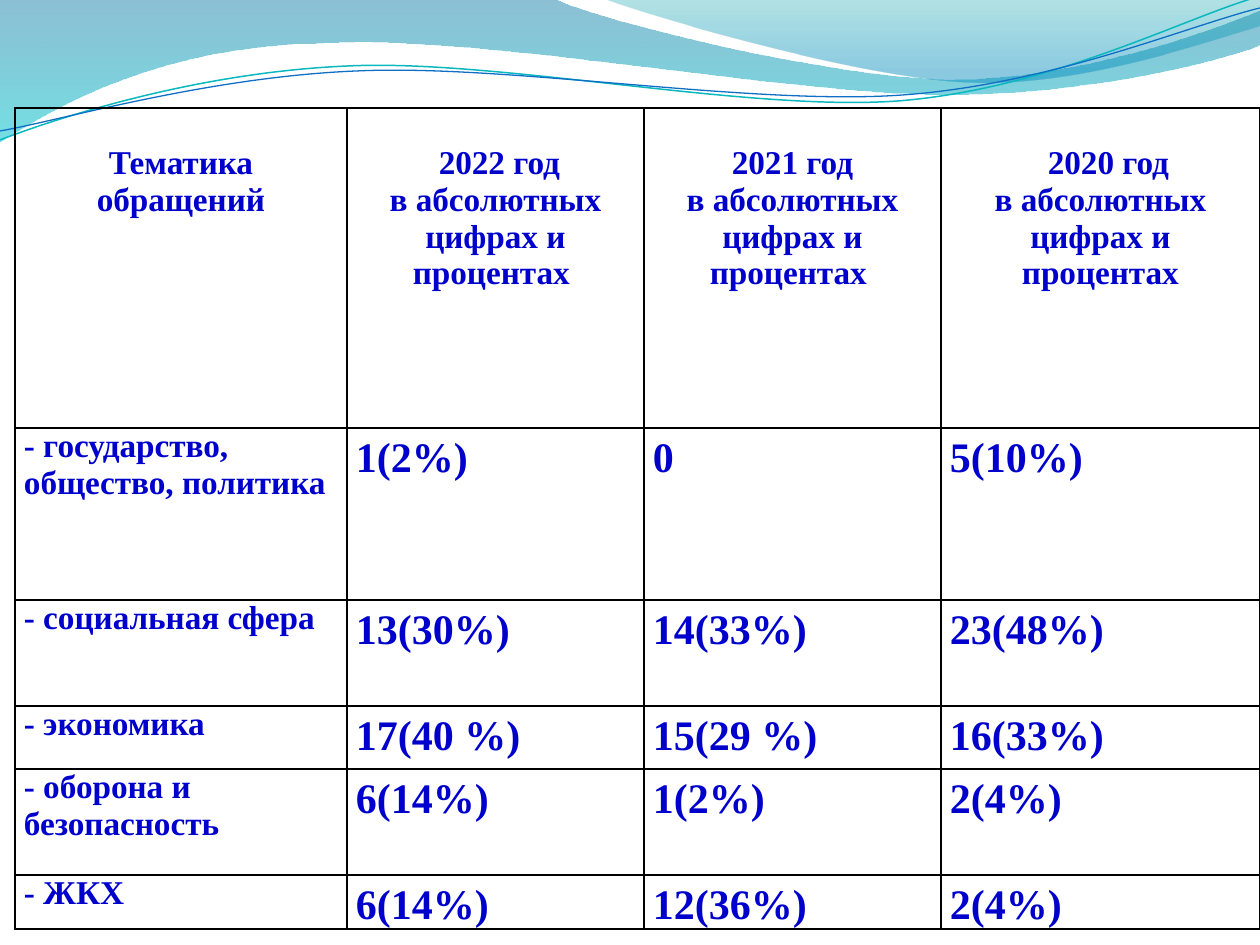
"""Build a slide with a wave banner and a table of appeals by topic and year."""
import math
from dataclasses import dataclass
from itertools import pairwise

from lxml import etree
from pptx import Presentation
from pptx import util as u
from pptx.dml.color import RGBColor
from pptx.enum import text
from pptx.oxml.ns import qn

PX = 914400 / 126
FONT = "Times New Roman"
COLORS = {
    "text": "0000CC", "border": "000000",
    "deep": "0074A1", "aqua": "00C6CF",
    "teal": "00A1A9", "sky": "008BBF",
    "teal_line": "0AB8BF", "blue_line": "0F6FC6",
}


@dataclass(frozen=True)
class Stop:
    position: float
    color: str
    opacity: int


@dataclass(frozen=True)
class Wave:
    box: tuple[int, int, int, int]
    start: tuple[int, int]
    segments: tuple[tuple[int, ...], ...]
    stops: tuple[Stop, ...] = ()
    line: str = ""
    width: float = 0
    rotation: float = 0


@dataclass(frozen=True)
class Header:
    lines: tuple[str, ...]
    indent: int = 0


@dataclass(frozen=True)
class Row:
    height: int
    topic: str
    values: tuple[str, ...]


WAVES = (
    Wave((-1, -1, 1262, 143), (0, 0),
         ((554, -1), (600, 21, 837, 79, 955, 79), (1074, 79, 1207, 33, 1260, 11),
          (1261, 45), (1239, 55, 1096, 96, 940, 94), (784, 94, 481, 35, 324, 43),
          (163, 45, 58, 105, -1, 142), (0, 0)),
         stops=(Stop(0, "deep", 45), Stop(1, "aqua", 55))),
    Wave((604, -1, 656, 88), (604, -1),
         ((641, 14, 859, 78, 969, 82), (1079, 87, 1211, 40, 1260, 26), (1260, 0), (604, -1)),
         stops=(Stop(0, "teal", 30), Stop(0.8, "sky", 45))),
    Wave((-3, 28, 1263, 89), (0, 140),
         ((60, 117, 199, 72, 349, 66), (498, 59, 747, 112, 898, 101),
          (1050, 89, 1182, 19, 1257, -3)), line="teal_line", width=0.85, rotation=357.3),
    Wave((-3, 38, 1264, 73), (0, 131),
         ((59, 121, 207, 77, 357, 71), (508, 64, 752, 106, 903, 95),
          (1053, 84, 1187, 26, 1260, 8)), line="blue_line", width=0.75, rotation=357.3),
)
COLUMN_EDGES = (15, 347, 644, 941, 1260)
TABLE_TOP = 108
HEADER_HEIGHT = 320
HEADER_INSET = 37
UNITS = "в абсолютных цифрах и процентах"
HEADERS = (
    Header(("Тематика обращений",)),
    Header(("2022 год", UNITS + " "), indent=8),
    Header(("2021 год", UNITS + " ")),
    Header(("2020 год", UNITS), indent=16),
)
ROWS = (
    Row(172, "- государство, общество, политика", ("1(2%)", "0", "5(10%)")),
    Row(106, "- социальная сфера", ("13(30%)", "14(33%)", "23(48%)")),
    Row(63, "- экономика", ("17(40 %)", "15(29 %)", "16(33%)")),
    Row(106, "- оборона и безопасность", ("6(14%)", "1(2%)", "2(4%)")),
    Row(54, "- ЖКХ", ("6(14%)", "12(36%)", "2(4%)")),
)


def px(n: float) -> u.Emu:
    """Turn pixels into EMU."""
    return u.Emu(round(n * PX))


def rgb(name: str) -> RGBColor:
    """Look up a named colour."""
    return RGBColor.from_string(COLORS[name])


def to_local(wave: Wave, x: float, y: float) -> tuple[u.Emu, u.Emu]:
    """Turn a slide point into a point of the wave's unrotated box."""
    left, top, width, height = wave.box
    dx, dy = x - left - width / 2, y - top - height / 2
    sin, cos = math.sin(math.radians(-wave.rotation)), math.cos(math.radians(wave.rotation))
    return px(width / 2 + dx * cos - dy * sin), px(height / 2 + dx * sin + dy * cos)


def set_curves(sp, wave: Wave) -> None:
    """Replace the straight outline of a freeform by the lines and curves of a wave."""
    sp.left, sp.top, sp.width, sp.height = map(px, wave.box)
    sp.rotation = wave.rotation
    outline = next(sp._element.iter(qn("a:path")))
    outline.set("w", str(sp.width))
    outline.set("h", str(sp.height))
    for child in list(outline):
        outline.remove(child)
    for i, segment in enumerate((wave.start, *wave.segments)):
        tag = "moveTo" if i == 0 else "lnTo" if len(segment) == 2 else "cubicBezTo"
        step = etree.SubElement(outline, qn(f"a:{tag}"))
        for point in zip(segment[::2], segment[1::2]):
            x, y = to_local(wave, *point)
            etree.SubElement(step, qn("a:pt"), x=str(x), y=str(y))
    if wave.stops:
        etree.SubElement(outline, qn("a:close"))


def draw_wave(s, wave: Wave) -> None:
    """Draw a wave as a gradient area or as an open line."""
    builder = s.shapes.build_freeform(*map(px, wave.start), scale=1.0)
    builder.add_line_segments([tuple(map(px, segment[-2:])) for segment in wave.segments],
                              close=False)
    sp = builder.convert_to_shape()
    set_curves(sp, wave)
    sp.shadow.inherit = False
    if not wave.stops:
        sp.fill.background()
        sp.line.color.rgb = rgb(wave.line)
        sp.line.width = u.Pt(wave.width)
        return
    sp.line.fill.background()
    sp.fill.gradient()
    sp.fill.gradient_angle = 270
    for target, stop in zip(sp.fill.gradient_stops, wave.stops):
        target.position = stop.position
        target.color.rgb = rgb(stop.color)
    for color, stop in zip(sp._element.spPr.iter(qn("a:srgbClr")), wave.stops):
        etree.SubElement(color, qn("a:alpha"), val=str(stop.opacity * 1000))


def set_borders(cell) -> None:
    """Give a cell a thin solid border on all four sides."""
    tc_pr = cell._tc.get_or_add_tcPr()
    for i, side in enumerate(("lnL", "lnR", "lnT", "lnB")):
        ln = etree.Element(qn(f"a:{side}"), w=str(u.Pt(1)))
        fill = etree.SubElement(ln, qn("a:solidFill"))
        etree.SubElement(fill, qn("a:srgbClr"), val=COLORS["border"])
        tc_pr.insert(i, ln)


def write(cell, *lines: str, size: float = 19, align=text.PP_ALIGN.LEFT,
          spacing: float = 1.0, top: int = 0, indent: int = 0) -> None:
    """Write paragraphs into a cell, the first one indented, and format them."""
    cell.fill.background()
    set_borders(cell)
    cell.margin_left = cell.margin_right = px(9)
    cell.margin_top, cell.margin_bottom = px(top), 0
    tf = cell.text_frame
    for i, line in enumerate(lines):
        p = tf.paragraphs[0] if i == 0 else tf.add_paragraph()
        p.alignment, p.line_spacing = align, spacing
        p._p.get_or_add_pPr().set("marL", str(px(0 if i else indent)))
        r = p.add_run()
        r.text = line
        r.font.name, r.font.size, r.font.bold = FONT, u.Pt(size), True
        r.font.color.rgb = rgb("text")


def draw_table(s) -> None:
    """Draw the table of appeals."""
    heights = [HEADER_HEIGHT] + [row.height for row in ROWS]
    left, right = COLUMN_EDGES[0], COLUMN_EDGES[-1]
    table = s.shapes.add_table(len(heights), len(HEADERS), px(left), px(TABLE_TOP),
                               px(right - left), px(sum(heights))).table
    table.first_row = table.horz_banding = False
    for column, (start, end) in zip(table.columns, pairwise(COLUMN_EDGES)):
        column.width = px(end - start)
    for table_row, height in zip(table.rows, heights):
        table_row.height = px(height)
    for j, header in enumerate(HEADERS):
        write(table.cell(0, j), *header.lines, align=text.PP_ALIGN.CENTER,
              top=HEADER_INSET, indent=header.indent)
    for i, row in enumerate(ROWS, 1):
        write(table.cell(i, 0), row.topic)
        for j, value in enumerate(row.values, 1):
            write(table.cell(i, j), value, size=24, spacing=1.15)


prs = Presentation()
prs.slide_width, prs.slide_height = px(1260), px(945)
s = prs.slides.add_slide(prs.slide_layouts[6])
for wave in WAVES:
    draw_wave(s, wave)
draw_table(s)
prs.save("out.pptx")
